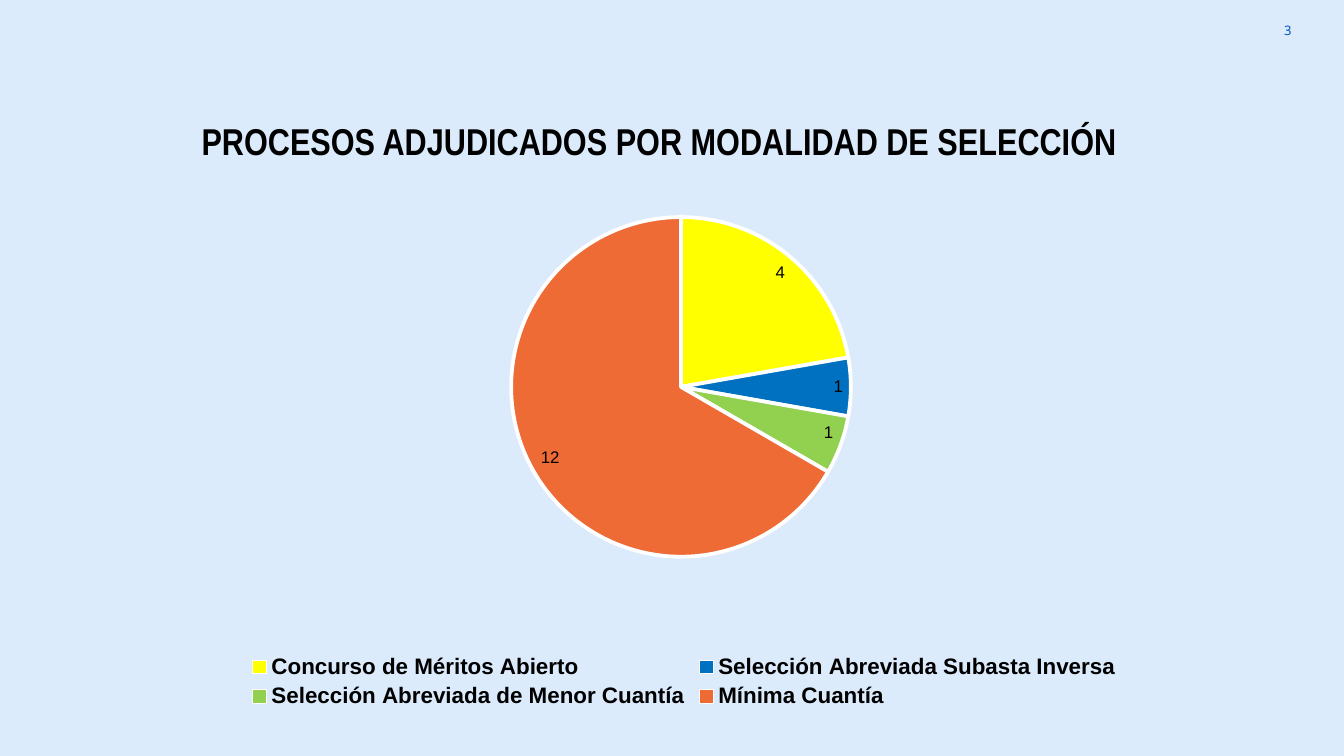
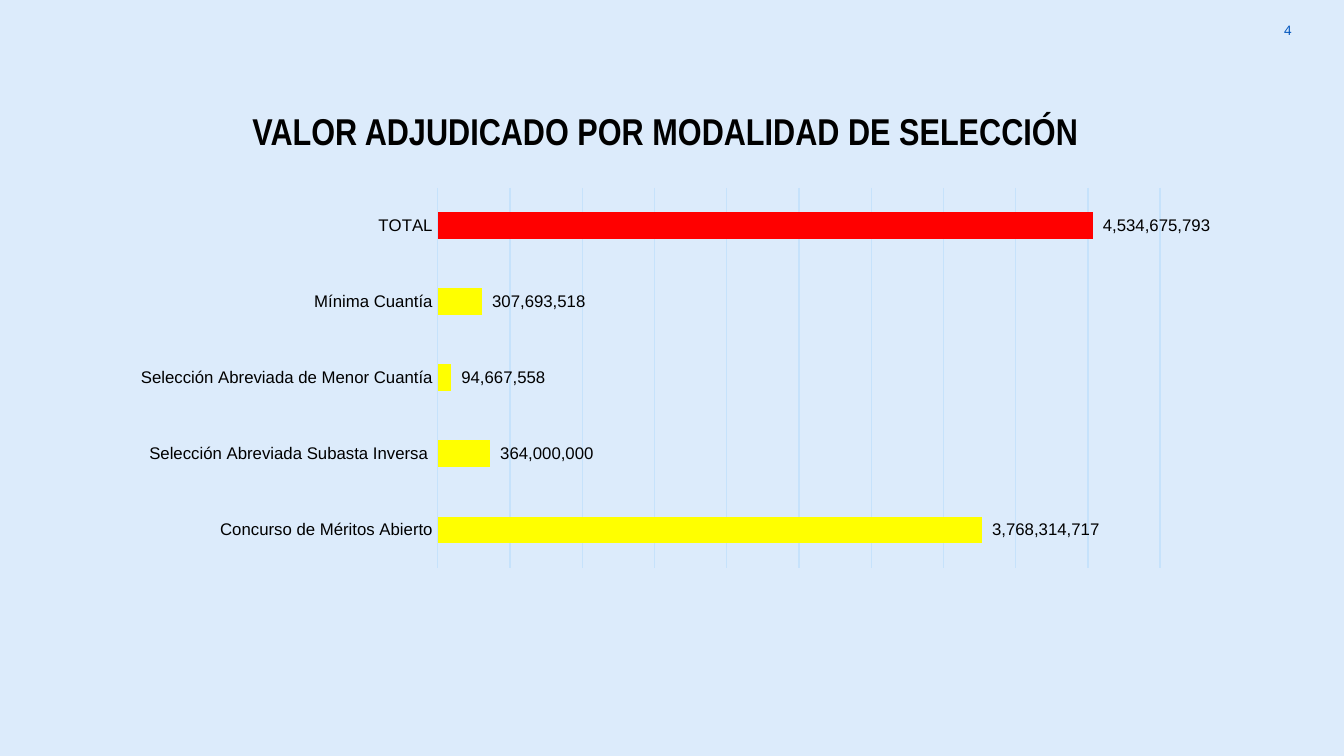
from lxml.etree import SubElement
from pptx import Presentation
from pptx.chart.data import CategoryChartData
from pptx.dml.color import RGBColor
from pptx.enum.chart import XL_CHART_TYPE, XL_LABEL_POSITION, XL_LEGEND_POSITION, XL_TICK_MARK
from pptx.enum.text import MSO_ANCHOR, MSO_AUTO_SIZE, PP_ALIGN
from pptx.oxml.ns import qn
from pptx.util import Cm, Pt

COLORS = {
    "background": "DCEBFB", "number": "0054BC", "text": "000000", "chart_text": "073763",
    "grid": "C6E2FB", "white": "FFFFFF", "yellow": "FFFF00", "blue": "0070C0",
    "green": "92D050", "orange": "EE6B36", "red": "FF0000",
}
MODALITIES = [
    "Concurso de Méritos Abierto", "Selección Abreviada Subasta Inversa ",
    "Selección Abreviada de Menor Cuantía", "Mínima Cuantía",
]
ACCOUNTING = r'_(* #,##0_);_(* \(#,##0\);_(* "-"_);_(@_)'


def color(name):
    """Return the named palette colour."""
    return RGBColor.from_string(COLORS[name])


def style_font(font, size, name="Arial", tint="text", bold=False):
    """Set the typeface, size, colour and weight of a font."""
    font.name, font.size, font.bold = name, Pt(size), bold
    font.color.rgb = color(tint)


def paint(fill, name):
    """Give a fill one solid palette colour."""
    fill.solid()
    fill.fore_color.rgb = color(name)


def draw_line(line, name, width):
    """Give a line a palette colour and a width in points."""
    line.color.rgb = color(name)
    line.width = Pt(width)


def add_text(slide, box, text, align=PP_ALIGN.LEFT, anchor=MSO_ANCHOR.TOP,
             inset=0.13, wrap=True, grow=False, **font):
    """Write one paragraph into a box given in centimetres."""
    frame = slide.shapes.add_textbox(*map(Cm, box)).text_frame
    frame.word_wrap = wrap
    frame.auto_size = MSO_AUTO_SIZE.SHAPE_TO_FIT_TEXT if grow else MSO_AUTO_SIZE.NONE
    frame.vertical_anchor = anchor
    frame.margin_top = frame.margin_bottom = Cm(inset)
    paragraph = frame.paragraphs[0]
    paragraph.alignment = align
    run = paragraph.add_run()
    run.text = text
    style_font(run.font, **font)


def add_base(deck, number, title, title_box, wrap=True):
    """Add a slide with the shared background, page number and title."""
    slide = deck.slides.add_slide(deck.slide_layouts[6])
    paint(slide.background.fill, "background")
    add_text(slide, (23.14, 0.03, 1.52, 1.09), str(number), align=PP_ALIGN.RIGHT,
             anchor=MSO_ANCHOR.MIDDLE, inset=0.25, size=7, name="Noto Sans", tint="number")
    add_text(slide, title_box, title, wrap=wrap, grow=True,
             size=20, name="Arial Narrow", bold=True)
    return slide


def place_plot(chart, area):
    """Fix the inner plot area as fractions x, y, w, h of the chart."""
    plot_area = chart._chartSpace.chart.plotArea
    for old in plot_area.findall(qn("c:layout")):
        plot_area.remove(old)
    layout = SubElement(plot_area, qn("c:layout"))
    plot_area.insert(0, layout)
    manual = SubElement(layout, qn("c:manualLayout"))
    settings = [("layoutTarget", "inner"), ("xMode", "edge"), ("yMode", "edge")]
    for tag, value in settings + list(zip("xywh", area)):
        SubElement(manual, qn(f"c:{tag}")).set("val", str(value))


def add_chart(slide, box, kind, categories, values, area, label_position, number_format):
    """Add a one-series chart with value labels in the shared style."""
    data = CategoryChartData()
    data.categories = categories
    data.add_series("Series 1", values)
    chart = slide.shapes.add_chart(kind, *map(Cm, box), data).chart
    chart.has_title = False
    chart.has_legend = False
    style_font(chart.font, 10, tint="chart_text")
    place_plot(chart, area)
    plot = chart.plots[0]
    plot.has_data_labels = True
    labels = plot.data_labels
    labels.show_value = True
    labels.position = label_position
    labels.number_format, labels.number_format_is_linked = number_format, False
    style_font(labels.font, 9)
    return chart


def add_pie(slide, box):
    """Draw the awarded processes as a pie with a legend below."""
    chart = add_chart(slide, box, XL_CHART_TYPE.PIE, MODALITIES, [4, 1, 1, 12],
                      (0, 0.05, 0.99, 0.65), XL_LABEL_POSITION.INSIDE_END, "General")
    plot = chart.plots[0]
    plot.vary_by_categories = True
    for index, name in enumerate(["yellow", "blue", "green", "orange"]):
        slice_format = plot.series[0].points[index].format
        paint(slice_format.fill, name)
        draw_line(slice_format.line, "white", 2)
    chart.has_legend = True
    chart.legend.position = XL_LEGEND_POSITION.BOTTOM
    chart.legend.include_in_layout = False
    style_font(chart.legend.font, 12, bold=True)


def add_bars(slide, box):
    """Draw the awarded values as bars with the total in red."""
    values = [3768314717, 364000000, 94667558, 307693518]
    chart = add_chart(slide, box, XL_CHART_TYPE.BAR_CLUSTERED, MODALITIES + ["TOTAL"],
                      values + [sum(values)], (0.285, 0.02, 0.667, 0.96),
                      XL_LABEL_POSITION.OUTSIDE_END, ACCOUNTING)
    plot = chart.plots[0]
    plot.vary_by_categories = False
    plot.gap_width = 182
    awarded = plot.series[0]
    awarded.invert_if_negative = False
    paint(awarded.format.fill, "yellow")
    paint(awarded.points[len(values)].format.fill, "red")

    modality_axis, amount_axis = chart.category_axis, chart.value_axis
    modality_axis.major_tick_mark = modality_axis.minor_tick_mark = XL_TICK_MARK.NONE
    style_font(modality_axis.tick_labels.font, 9)
    draw_line(modality_axis.format.line, "grid", 0.75)
    amount_axis.visible = False
    amount_axis.minimum_scale, amount_axis.maximum_scale = 0, 5_000_000_000
    amount_axis.major_unit = 500_000_000
    amount_axis.has_major_gridlines = True
    draw_line(amount_axis.major_gridlines.format.line, "grid", 0.75)


def main():
    """Build both slides and save the deck."""
    deck = Presentation()
    deck.slide_width, deck.slide_height = Cm(25.4), Cm(14.29)
    processes = add_base(deck, 3, "PROCESOS ADJUDICADOS POR MODALIDAD DE SELECCIÓN",
                         (3.56, 2.11, 18, 1.12))
    add_pie(processes, (1.09, 3.61, 23.8, 9.88))
    amounts = add_base(deck, 4, "VALOR ADJUDICADO POR MODALIDAD DE SELECCIÓN",
                       (4.52, 1.91, 16.71, 1.12), wrap=False)
    add_bars(amounts, (2.44, 3.4, 20.52, 7.49))
    deck.save("out.pptx")


if __name__ == "__main__":
    main()
